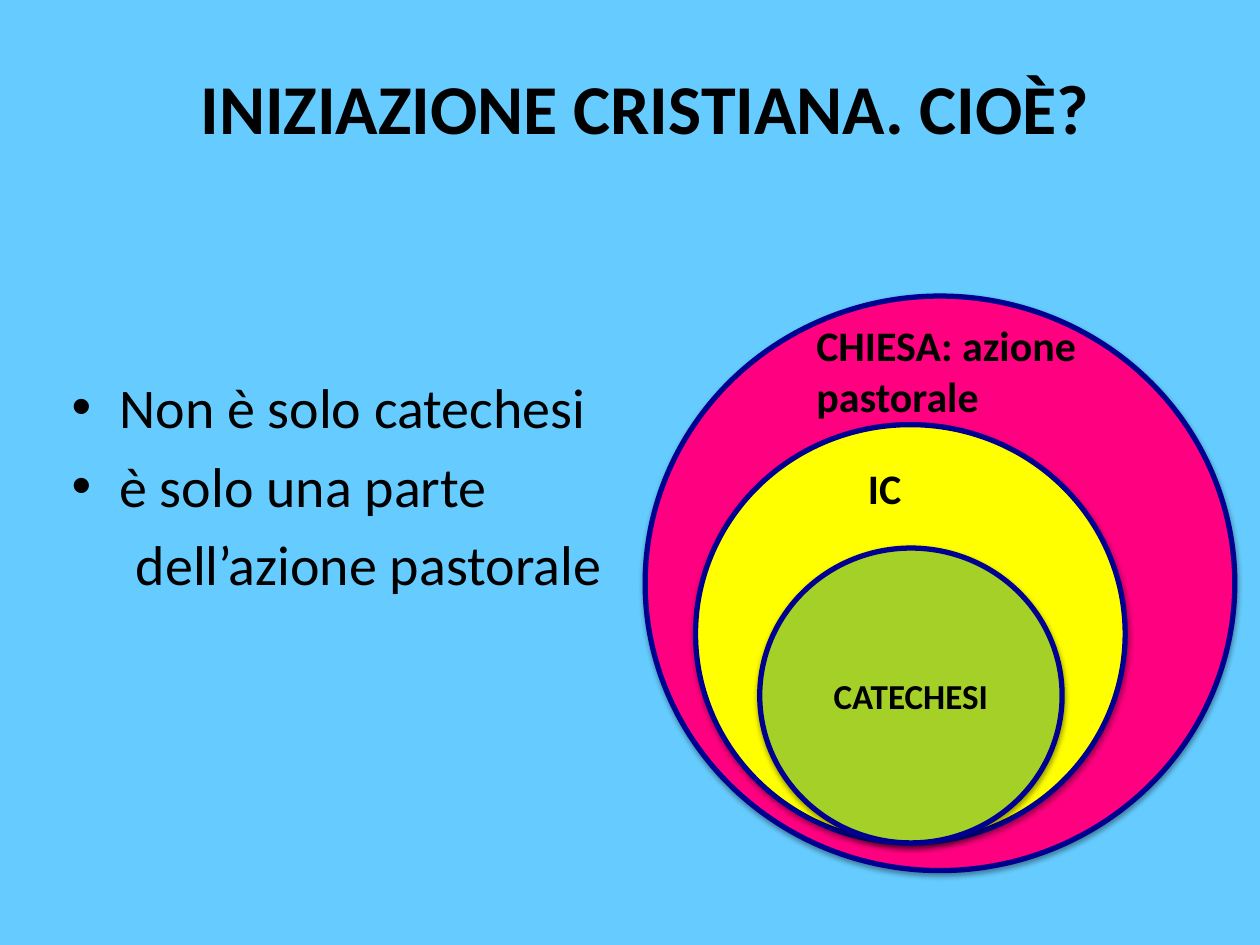
"""Build a slide that places catechesis inside Christian initiation and the Church."""
from lxml import etree
from pptx import Presentation
from pptx.dml.color import RGBColor
from pptx.enum.shapes import MSO_SHAPE
from pptx.enum.text import MSO_ANCHOR, MSO_AUTO_SIZE, PP_ALIGN
from pptx.oxml.ns import qn
from pptx.util import Inches, Pt

OVAL = MSO_SHAPE.OVAL
MIDDLE = MSO_ANCHOR.MIDDLE
GROW = MSO_AUTO_SIZE.SHAPE_TO_FIT_TEXT
LEFT, CENTER = PP_ALIGN.LEFT, PP_ALIGN.CENTER
FONT = "Calibri"
COLORS = {
    "background": "66CCFF", "church": "FF0080", "initiation": "FFFF00",
    "catechesis": "A5D028", "outline": "000090", "text": "000000",
}

TITLE = ("INIZIAZIONE CRISTIANA. CIOÈ?", (1.45, 0.46, 7.34, 0.77))
BODY_AT = (0.47, 2.91, 8.81, 3.77)
BODY = [
    ("Non è solo catechesi", True),
    ("è solo una parte", True),
    ("dell’azione pastorale", False),
]
BULLET_INDENT, PLAIN_INDENT = 0.38, 0.51
CHURCH = ("church", (5.12, 2.35, 4.68, 4.56))
INNER_CIRCLES = [
    ("initiation", (5.52, 3.37, 3.41, 3.32)),
    ("catechesis", (6.03, 4.35, 2.4, 2.34)),
]
CATECHESIS_LABEL = "CATECHESI"
LABELS = [
    ("IC", (6.79, 3.62, 0.62, 0.5)),
    ("CHIESA: azione pastorale", (6.38, 2.49, 2.55, 0.91)),
]


def color(name):
    return RGBColor.from_string(COLORS[name])


def inches(place):
    return [Inches(value) for value in place]


def write(para, text, size, bold=True, align=LEFT):
    para.text = text
    para.alignment = align
    para.font.name, para.font.size, para.font.bold = FONT, Pt(size), bold
    para.font.color.rgb = color("text")


def add_label(page, text, place, size, align=LEFT, wrap=True):
    box = page.shapes.add_textbox(*inches(place))
    box.text_frame.word_wrap = wrap
    box.text_frame.auto_size = GROW
    write(box.text_frame.paragraphs[0], text, size, align=align)


def add_circle(page, name, place):
    circle = page.shapes.add_shape(OVAL, *inches(place))
    circle.fill.solid()
    circle.fill.fore_color.rgb = color(name)
    circle.line.color.rgb = color("outline")
    circle.line.width = Pt(3)
    circle.shadow.inherit = False
    effects = circle._element.spPr.find(qn("a:effectLst"))
    shadow = etree.SubElement(effects, qn("a:outerShdw"), blurRad=str(Pt(3.1)),
                              dist=str(Pt(1.6)), dir="5400000", rotWithShape="0")
    tint = etree.SubElement(shadow, qn("a:srgbClr"), val="000000")
    etree.SubElement(tint, qn("a:alpha"), val="38000")
    return circle


def add_body(page):
    frame = page.shapes.add_textbox(*inches(BODY_AT)).text_frame
    frame.word_wrap = True
    for index, (text, bulleted) in enumerate(BODY):
        para = frame.add_paragraph() if index else frame.paragraphs[0]
        write(para, text, 32, bold=False)
        para.space_before = Pt(6.4 if index else 0)
        props = para._p.get_or_add_pPr()
        props.set("marL", str(Inches(BULLET_INDENT if bulleted else PLAIN_INDENT)))
        props.set("indent", str(-Inches(BULLET_INDENT) if bulleted else 0))
        if bulleted:
            bullet_font = etree.Element(qn("a:buFont"), typeface="Arial")
            bullet = etree.Element(qn("a:buChar"), char="•")
            props.find(qn("a:defRPr")).addprevious(bullet_font)
            bullet_font.addnext(bullet)


def main():
    deck = Presentation()
    deck.slide_width, deck.slide_height = Inches(10), Inches(7.5)
    page = deck.slides.add_slide(deck.slide_layouts[6])
    page.background.fill.solid()
    page.background.fill.fore_color.rgb = color("background")

    add_circle(page, *CHURCH)
    add_body(page)
    for name, place in INNER_CIRCLES:
        circle = add_circle(page, name, place)
    circle.text_frame.vertical_anchor = MIDDLE
    write(circle.text_frame.paragraphs[0], CATECHESIS_LABEL, 20, align=CENTER)
    for text, place in LABELS:
        add_label(page, text, place, 24)
    add_label(page, *TITLE, 40, align=CENTER, wrap=False)
    deck.save("out.pptx")


if __name__ == "__main__":
    main()
